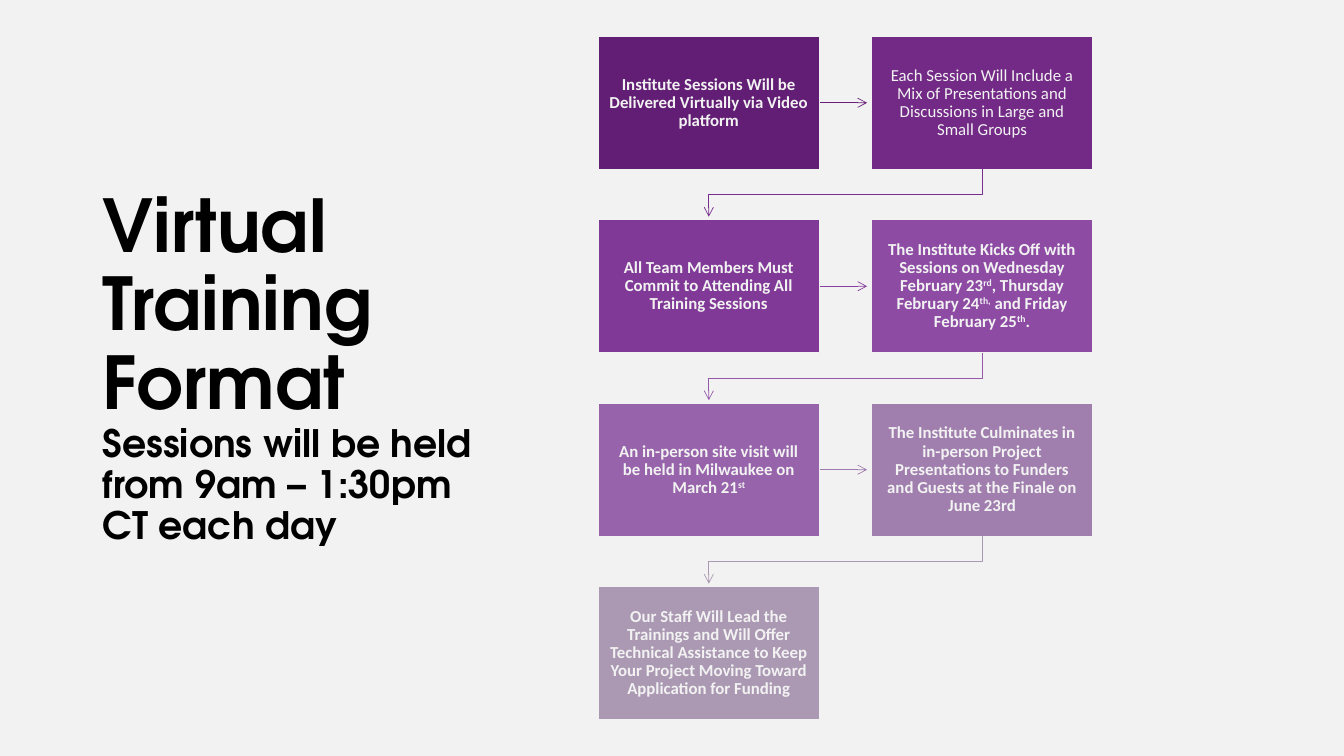
from lxml import etree
from pptx import Presentation
from pptx import util as u
from pptx.dml.color import RGBColor
from pptx.enum import shapes, text
from pptx.oxml import ns

BOX_W, BOX_H = 2.2, 1.32
LEFT, TOP = 5.93, 0.36
COL_STEP, ROW_STEP = 2.71, 1.82
ARROW = 0.47  # length of each arrow along its direction of travel

# Fill, colour of the arrow that leaves the box, bold, text parts
# (every second part is superscript)
STEPS = [
    ("621D74", "671F7A", True,
     ["Institute Sessions Will be Delivered Virtually via Video platform"]),
    ("722A86", "782E8E", False,
     ["Each Session Will Include a Mix of Presentations and Discussions in Large and Small Groups"]),
    ("803996", "88419F", True,
     ["All Team Members Must Commit to Attending All Training Sessions"]),
    ("8D4BA4", "9559AB", True,
     ["The Institute Kicks Off with Sessions on Wednesday February 23", "rd",
      ", Thursday February 24", "th,", " and Friday February 25", "th", "."]),
    ("9763AB", "9F7AAE", True,
     ["An in-person site visit will be held in Milwaukee on March 21", "st"]),
    ("A07FAE", "AB98B3", True,
     ["The Institute Culminates in in-person Project Presentations to Funders and Guests "
      "at the Finale on June 23rd"]),
    ("AB99B3", None, True,
     ["Our Staff Will Lead the Trainings and Will Offer Technical Assistance to Keep "
      "Your Project Moving Toward Application for Funding"]),
]


def rgb(value):
    return RGBColor.from_string(value)


class Deck:
    paper = "F2F2F2"
    title_font = {"name": "TeX Gyre Adventor", "bold": True}
    box_font = {"name": "Calibri", "size": u.Pt(12)}

    def __init__(self, prs):
        self.s = prs.slides.add_slide(prs.slide_layouts[5])
        self.s.background.fill.solid()
        self.s.background.fill.fore_color.rgb = rgb(self.paper)

    def style(self, target, values):
        for key, value in values.items():
            setattr(target, key, value)

    def run(self, p, words, color, **values):
        r = p.add_run()
        r.text = words
        r.font.color.rgb = rgb(color)
        self.style(r.font, values)
        return r

    def title(self, heading, subheading):
        sp = self.s.shapes.title
        self.style(sp, {"left": u.Inches(0.92), "top": u.Inches(0.61),
                        "width": u.Inches(4.03), "height": u.Inches(6.09)})
        self.style(sp.text_frame, {"word_wrap": True, "auto_size": text.MSO_AUTO_SIZE.NONE,
                                   "vertical_anchor": text.MSO_ANCHOR.MIDDLE})
        p = sp.text_frame.paragraphs[0]
        self.style(p, {"alignment": text.PP_ALIGN.LEFT, "line_spacing": 0.9})
        self.run(p, heading, "000000", size=u.Pt(52), **self.title_font)
        p.add_line_break()
        self.run(p, subheading, "000000", size=u.Pt(27), **self.title_font)

    def box(self, x, y, fill, bold, parts):
        sp = self.s.shapes.add_shape(shapes.MSO_SHAPE.RECTANGLE, u.Inches(x), u.Inches(y),
                                     u.Inches(BOX_W), u.Inches(BOX_H))
        sp.shadow.inherit = False
        sp.fill.solid()
        sp.fill.fore_color.rgb = rgb(fill)
        sp.line.color.rgb = rgb(self.paper)
        sp.line.width = u.Pt(1)
        tf = sp.text_frame
        self.style(tf, {"word_wrap": True, "vertical_anchor": text.MSO_ANCHOR.MIDDLE})
        self.style(tf, {f"margin_{side}": u.Inches(0.11)
                        for side in ("left", "top", "right", "bottom")})
        p = tf.paragraphs[0]
        self.style(p, {"alignment": text.PP_ALIGN.CENTER, "line_spacing": 0.9})
        for i, words in enumerate(parts):
            r = self.run(p, words, self.paper, bold=bold, **self.box_font)
            if i % 2:
                r.font._element.set("baseline", "30000")

    def finish_arrow(self, line, color):
        line.color.rgb = rgb(color)
        line.width = u.Pt(0.5)
        etree.SubElement(line._get_or_add_ln(), ns.qn("a:tailEnd"), type="arrow")

    def straight_arrow(self, x, y, color):
        sp = self.s.shapes.add_connector(shapes.MSO_CONNECTOR.STRAIGHT, u.Inches(x), u.Inches(y),
                                         u.Inches(x + ARROW), u.Inches(y))
        self.finish_arrow(sp.line, color)
        etree.SubElement(sp._element.spPr, ns.qn("a:effectLst"))

    def return_arrow(self, x, y, color):
        """Down, back to the left column, and down to the next row."""
        points = [(x, y + 0.25), (x - COL_STEP, y + 0.25), (x - COL_STEP, y + ARROW)]
        builder = self.s.shapes.build_freeform(u.Inches(x), u.Inches(y))
        builder.add_line_segments([(u.Inches(a), u.Inches(b)) for a, b in points], close=False)
        sp = builder.convert_to_shape()
        sp.fill.background()
        self.finish_arrow(sp.line, color)
        sp.shadow.inherit = False


def main():
    prs = Presentation()
    prs.slide_width, prs.slide_height = u.Inches(13.33), u.Inches(7.5)
    deck = Deck(prs)

    # Title
    deck.title("Virtual Training Format", "Sessions will be held from 9am – 1:30pm CT each day")

    # Steps, two to a row, each followed by its arrow
    for i, (fill, arrow_color, bold, parts) in enumerate(STEPS):
        row, col = divmod(i, 2)
        x, y = LEFT + col * COL_STEP, TOP + row * ROW_STEP
        deck.box(x, y, fill, bold, parts)
        if arrow_color and col == 0:
            deck.straight_arrow(x + BOX_W, y + BOX_H / 2, arrow_color)
        elif arrow_color:
            deck.return_arrow(x + BOX_W / 2, y + BOX_H, arrow_color)

    prs.save("out.pptx")


if __name__ == "__main__":
    main()
